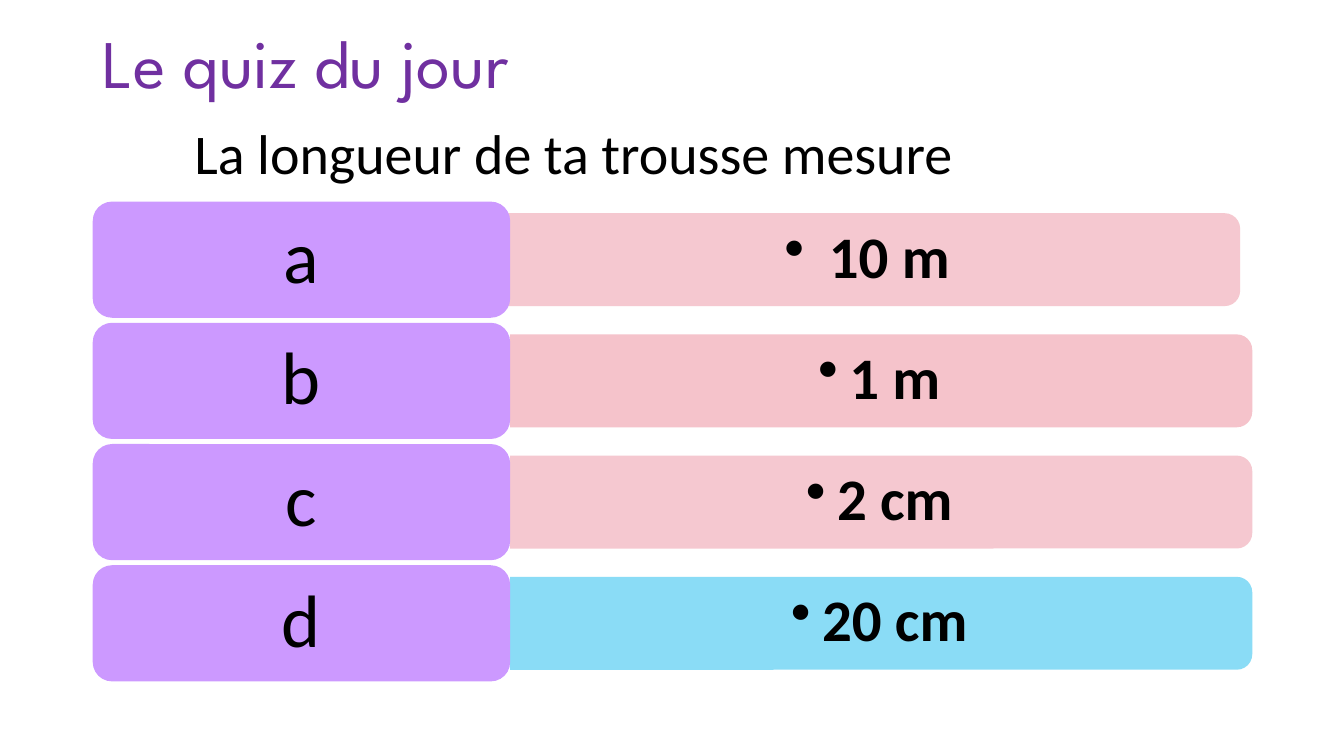
from lxml import etree
from pptx import Presentation, util as u
from pptx.dml.color import RGBColor
from pptx.enum import shapes, text
from pptx.oxml.ns import qn

PINK, BLUE, LILAC = "F5C3CB", "7ED9F6", "CC99FF"
BLACK, PURPLE = "000000", "7030A0"
# letter, answer, bar colour, bar opacity in percent, shift of the bar to the left
ANSWERS = [
    ("a", " 10 m", PINK, 90, 0.12),
    ("b", "1 m", PINK, 100, 0),
    ("c", "2 cm", PINK, 90, 0),
    ("d", "20 cm", BLUE, 90, 0),
]


def colour(hex_value):
    return RGBColor.from_string(hex_value)


def inches(*lengths):
    return [u.Inches(length) for length in lengths]


def write(shape, wording, font_name, size, font_colour, align=text.PP_ALIGN.CENTER,
          anchor=text.MSO_ANCHOR.MIDDLE, bold=False, spacing=0.9):
    frame = shape.text_frame
    frame.word_wrap = True
    frame.auto_size = text.MSO_AUTO_SIZE.NONE
    frame.vertical_anchor = anchor
    paragraph = frame.paragraphs[0]
    paragraph.text = wording
    paragraph.alignment = align
    paragraph.line_spacing = spacing
    font = paragraph.font
    font.name, font.size, font.bold = font_name, u.Pt(size), bold
    font.color.rgb = colour(font_colour)
    return paragraph


def add_block(slide, kind, box, fill, opacity=100):
    shape = slide.shapes.add_shape(kind, *inches(*box))
    shape.shadow.inherit = False
    shape.line.fill.background()
    shape.fill.solid()
    shape.fill.fore_color.rgb = colour(fill)
    if opacity < 100:
        value = shape.fill._xPr.find(".//" + qn("a:srgbClr"))
        etree.SubElement(value, qn("a:alpha"), val=str(opacity * 1000))
    return shape


def add_bullet(paragraph, indent):
    properties = paragraph._p.get_or_add_pPr()
    properties.set("marL", str(u.Inches(indent)))
    properties.set("indent", str(-u.Inches(indent)))
    etree.SubElement(properties, qn("a:buChar"), char="•")


def add_heading(slide, left, top, width, height):
    title = slide.shapes.title
    title.left, title.top, title.width, title.height = inches(left, top, width, height)
    write(title, "Le quiz du jour", "League Spartan", 48.6, PURPLE, text.PP_ALIGN.LEFT)


def add_question(slide, left, top, width, height):
    question = slide.shapes.add_textbox(*inches(left, top, width, height))
    write(question, "La longueur de ta trousse mesure ", "Calibri", 40, BLACK,
          anchor=text.MSO_ANCHOR.TOP, spacing=1)


def add_answer_bar(slide, left, top, width, height, answer, fill, opacity):
    """Turn the bar a quarter so that its rounded end faces right."""
    bar_left = left + (width - height) / 2
    bar_top = top + (height - width) / 2
    bar = add_block(slide, shapes.MSO_SHAPE.ROUND_2_SAME_RECTANGLE,
                    (bar_left, bar_top, height, width), fill, opacity)
    bar.rotation = 90
    label = slide.shapes.add_textbox(*inches(left, top + 0.04, width - 0.04, height - 0.09))
    frame = label.text_frame
    frame.margin_left = frame.margin_right = u.Inches(0.17)
    frame.margin_top = frame.margin_bottom = u.Inches(0.09)
    add_bullet(write(label, answer, "Calibri", 42, BLACK, bold=True), 0.31)


def add_answers(slide, left, top, width, height):
    pitch = height / len(ANSWERS)
    letter_width, letter_height = width * 0.36, pitch - 0.05
    bar_height = letter_height * 0.8
    for row, (letter, answer, fill, opacity, shift) in enumerate(ANSWERS):
        row_top = top + row * pitch
        add_answer_bar(slide, left + letter_width - shift,
                       row_top + (letter_height - bar_height) / 2,
                       width - letter_width, bar_height, answer, fill, opacity)
        block = add_block(slide, shapes.MSO_SHAPE.ROUNDED_RECTANGLE,
                          (left, row_top, letter_width, letter_height), LILAC)
        write(block, letter, "Calibri", 53, BLACK)


def main():
    presentation = Presentation()
    presentation.slide_width, presentation.slide_height = inches(13.33, 7.5)
    slide = presentation.slides.add_slide(presentation.slide_layouts[5])
    add_heading(slide, 0.92, 0.27, 11.5, 0.77)
    add_answers(slide, 0.92, 2, 11.5, 4.81)
    add_question(slide, 0, 1.13, 11.5, 0.77)
    presentation.save("out.pptx")


if __name__ == "__main__":
    main()
